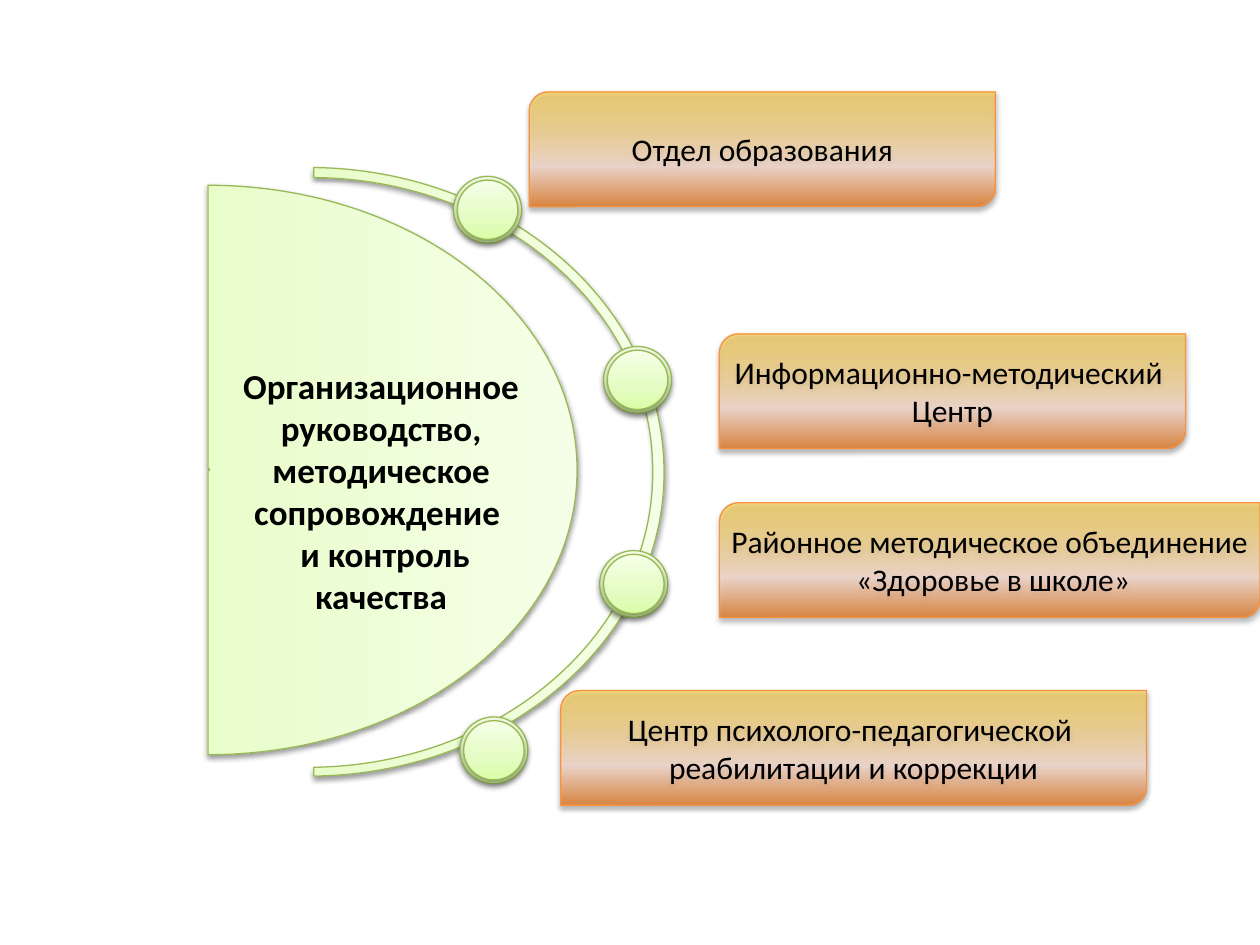
from lxml.etree import SubElement
from pptx import Presentation
from pptx.dml.color import RGBColor
from pptx.enum.shapes import MSO_SHAPE as Shape
from pptx.enum.text import MSO_ANCHOR as Anchor, MSO_AUTO_SIZE as AutoSize, PP_ALIGN as Align
from pptx.oxml import parse_xml
from pptx.oxml.ns import nsdecls, qn
from pptx.util import Inches, Pt

COLORS = {
    "lime": "DAFDA7", "pale_lime": "E4FCC2", "mist": "F5FFE7", "green": "98B955",
    "rust": "E46C0A", "peach": "FFDED0", "gold": "FFC000", "orange": "F69240",
    "black": "000000",
}
LEAF = [(0, "lime", 100), (35, "pale_lime", 100), (100, "mist", 100)]
PANEL = [(0, "rust", 69), (35, "peach", 69), (100, "gold", 45)]


def decorate(shape, stops, outline):
    stop_xml = "".join(
        f'<a:gs pos="{position * 1000}"><a:srgbClr val="{COLORS[color]}">'
        f'<a:alpha val="{alpha * 1000}"/></a:srgbClr></a:gs>'
        for position, color, alpha in stops)
    shape.fill.background()
    properties = shape.element.spPr
    properties.replace(properties.find(qn("a:noFill")), parse_xml(
        f'<a:gradFill {nsdecls("a")} rotWithShape="1"><a:gsLst>{stop_xml}</a:gsLst>'
        '<a:lin ang="16200000" scaled="0"/></a:gradFill>'))
    shape.line.color.rgb = RGBColor.from_string(COLORS[outline])
    shape.line.width = Pt(0.75)
    shape.shadow.inherit = False
    shadow = SubElement(properties.find(qn("a:effectLst")), qn("a:outerShdw"),
                        blurRad=str(Pt(3.1)), dist=str(Pt(1.6)),
                        dir="5400000", rotWithShape="0")
    shade = SubElement(shadow, qn("a:srgbClr"), val=COLORS["black"])
    SubElement(shade, qn("a:alpha"), val="38000")


def write(frame, lines, size, bold):
    frame.text = "\n".join(lines)
    for paragraph in frame.paragraphs:
        paragraph.alignment = Align.CENTER
        paragraph.font.name = "Calibri"
        paragraph.font.size = Pt(size)
        paragraph.font.bold = bold
        paragraph.font.color.rgb = RGBColor.from_string(COLORS["black"])


deck = Presentation()
deck.slide_width, deck.slide_height = Inches(10), Inches(7.5)
slide = deck.slides.add_slide(deck.slide_layouts[6])

half_disc = [
    ("moveTo", [(1.65, 3.74)]),
    ("cubicBezTo", [(1.66, 3.74), (1.66, 3.74), (1.66, 3.73)]),
    ("cubicBezTo", [(1.67, 3.72), (1.66, 3.72), (1.65, 3.72)]),
    ("lnTo", [(1.65, 1.47)]),
    ("cubicBezTo", [(3.27, 1.47), (4.58, 2.48), (4.58, 3.73)]),
    ("cubicBezTo", [(4.58, 4.98), (3.27, 5.99), (1.65, 5.99)]),
    ("close", []),
]
orbit = [
    ("moveTo", [(2.49, 1.41)]),
    ("cubicBezTo", [(3.98, 1.42), (5.19, 2.47), (5.18, 3.75)]),
    ("cubicBezTo", [(5.18, 5.03), (3.98, 6.07), (2.49, 6.09)]),
    ("lnTo", [(2.49, 6.16)]),
    ("cubicBezTo", [(4.03, 6.14), (5.27, 5.07), (5.27, 3.75)]),
    ("cubicBezTo", [(5.27, 2.43), (4.03, 1.35), (2.49, 1.33)]),
    ("close", []),
]
for left, top, width, height, curves in [(-0.61, 0.8, 4.51, 5.86, half_disc),
                                         (0.03, 0.92, 4.83, 5.65, orbit)]:
    builder = slide.shapes.build_freeform(Inches(0), Inches(0))
    builder.add_line_segments([(Inches(width), Inches(height))])
    arch = builder.convert_to_shape(Inches(left), Inches(top))
    arch.rotation = 90
    contour = arch.element.spPr.find(".//" + qn("a:path"))
    for segment in list(contour):
        contour.remove(segment)
    for command, points in curves:
        segment = SubElement(contour, qn(f"a:{command}"))
        for x, y in points:
            SubElement(segment, qn("a:pt"),
                       x=str(Inches(y - top - height / 2 + width / 2)),
                       y=str(Inches(height / 2 + left + width / 2 - x)))
    decorate(arch, LEAF, "green")

units = [
    (4.2, 0.73, 3.7, ["Отдел образования"]),
    (4.45, 5.48, 4.65, ["Центр психолого-педагогической ", "реабилитации и коррекции"]),
    (5.71, 2.65, 3.7, ["Информационно-методический ", "Центр"]),
    (5.71, 3.99, 4.29, ["Районное методическое объединение", " «Здоровье в школе»"]),
]
for left, top, width, lines in units:
    unit = slide.shapes.add_shape(Shape.ROUND_2_DIAG_RECTANGLE, Inches(left), Inches(top),
                                  Inches(width), Inches(0.91))
    decorate(unit, PANEL, "orange")
    unit.text_frame.word_wrap = False
    unit.text_frame.vertical_anchor = Anchor.MIDDLE
    write(unit.text_frame, lines, 18, False)

for left, top in [(3.6, 1.4), (4.79, 2.75), (4.76, 4.37), (3.65, 5.69)]:
    bead = slide.shapes.add_group_shape()
    for inset, width, height in [(0, 0.54, 0.53), (0.03, 0.48, 0.47)]:
        disc = bead.shapes.add_shape(Shape.OVAL, Inches(left + inset), Inches(top + inset),
                                     Inches(width), Inches(height))
        decorate(disc, LEAF, "green")

mission = slide.shapes.add_textbox(Inches(1.73), Inches(2.84), Inches(2.59), Inches(2.12))
mission.text_frame.word_wrap = True
mission.text_frame.auto_size = AutoSize.SHAPE_TO_FIT_TEXT
write(mission.text_frame,
      ["Организационное руководство, методическое сопровождение ", " и контроль качества"],
      20, True)

deck.save("out.pptx")
